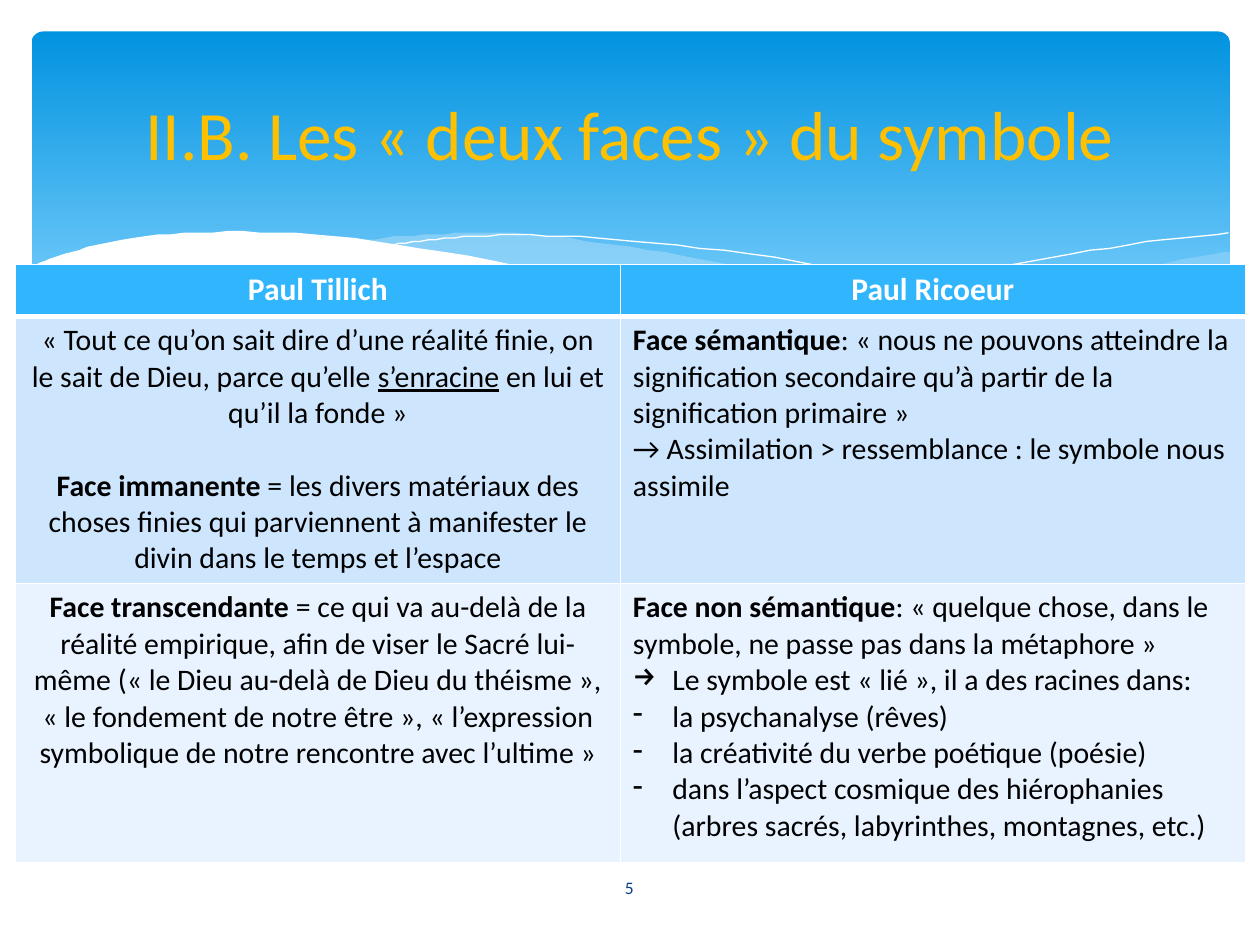
from dataclasses import dataclass

from lxml.etree import SubElement
from pptx import Presentation
from pptx.dml.color import RGBColor
from pptx.enum.shapes import MSO_SHAPE as Shp
from pptx.enum.text import MSO_ANCHOR as Anchor, PP_ALIGN as Align
from pptx.oxml import parse_xml
from pptx.oxml.ns import nsdecls, qn
from pptx.util import Pt


@dataclass(frozen=True)
class Theme:
    font: str = "Calibri"
    white: str = "FFFFFF"
    black: str = "000000"
    sky_top: str = "0293E0"
    sky_bottom: str = "83D3FE"
    haze: str = "C6E7FC"
    gold: str = "FFC000"
    navy: str = "073E87"
    header: str = "31B6FD"
    band_dark: str = "CEE5FE"
    band_light: str = "E8F3FF"
    title_size: float = 39.6
    header_size: float = 18
    body_size: float = 17
    number_size: float = 10


@dataclass(frozen=True)
class Run:
    text: str
    bold: bool = False
    underline: bool = False


@dataclass(frozen=True)
class Para:
    runs: tuple[Run, ...]
    align: Align = Align.LEFT
    bullet: str = ""
    after: float = 0


@dataclass(frozen=True)
class Wave:
    curves: tuple[list[tuple[float, float]], ...]
    fill: str = ""
    alpha: int = 100
    line: str = ""


T = Theme()
HANG = 22.5
BLANK_LINE = 20.75

WAVES = [
    Wave(([(475.9, 190.8), (508, 185), (542.2, 178.6), (579.6, 170.6), (619.9, 160.6),
           (652.3, 153.4), (682.6, 146.9), (702.7, 144)],
          [(702.7, 177.8), (683.3, 185), (663.1, 190.8), (640.1, 195.1), (614.9, 198.7),
           (586.1, 200.2), (553.7, 199.4), (517.7, 195.8), (475.9, 190.8)]),
         fill=T.haze, alpha=29),
    Wave(([(205.9, 137.5), (225.4, 135.4), (247.7, 133.9), (273.6, 133.2), (302.4, 133.9),
           (334.8, 137.5), (370.1, 142.6), (409.7, 149.8), (452.9, 159.8), (508.3, 172.8),
           (558, 182.9), (602.6, 190.8), (643, 196.6)],
          [(643, 196.6), (617, 199.4), (588.2, 200.2), (556.6, 199.4), (520, 196.6),
           (478.8, 191.5), (432.7, 183.6), (381.6, 172.8), (323.3, 159.8), (290.9, 151.9),
           (260.6, 146.2), (232.6, 141.1), (205.9, 137.5)]),
         fill=T.haze, alpha=40),
    Wave(([(222.5, 140.4), (236.2, 138.2), (254.2, 136.1), (278.6, 134.6), (311.8, 134.6),
           (352.1, 136.8), (400.3, 141.8), (457.9, 149.8), (523.4, 162.7), (598.3, 180.7),
           (653, 195.8)],), line=T.white),
    Wave(([(441.4, 185), (470.2, 177.1), (500.4, 169.2), (538.6, 160.6), (580.3, 151.2),
           (623.5, 143.3), (665.3, 136.8), (702, 133.2)],), line=T.white),
    Wave(([(16.6, 153.4), (25.9, 149), (37.4, 144.7), (54.7, 140.4), (76.3, 136.1),
           (105.1, 133.2), (139, 132.5), (180, 133.9), (227.5, 139.7), (281.5, 149),
           (342, 163.4), (399.6, 176.4), (451.4, 185.8), (495.4, 193), (535.7, 197.3),
           (571, 199.4), (602.6, 198.7), (630, 196.6), (655.2, 192.2), (676.8, 186.5),
           (703.4, 177.1)],
          [(703.4, 236.9), (16.6, 236.9)]), fill=T.white),
]

HEADER = [[Para((Run(name),), Align.CENTER)] for name in ("Paul Tillich", "Paul Ricoeur")]

IMMANENT = [
    Para((Run("« Tout ce qu’on sait dire d’une réalité finie, on le sait de Dieu, parce qu’elle "),
          Run("s’enracine", underline=True),
          Run(" en lui et qu’il la fonde »")), Align.CENTER, after=BLANK_LINE),
    Para((Run("Face immanente ", bold=True),
          Run("= les divers matériaux des choses finies qui parviennent à manifester "
              "le divin dans le temps et l’espace")), Align.CENTER),
]
SEMANTIC = [
    Para((Run("Face sémantique", bold=True),
          Run(": « nous ne pouvons atteindre la signification secondaire qu’à partir "
              "de la signification primaire »"))),
    Para((Run("→ Assimilation > ressemblance : le symbole nous assimile"),)),
]
TRANSCENDENT = [
    Para((Run("Face transcendante ", bold=True),
          Run("= ce qui va au-delà de la réalité empirique, afin de viser le Sacré lui-même "
              "(« le Dieu au-delà de Dieu du théisme », « le fondement de notre être », "
              "« l’expression symbolique de notre rencontre avec l’ultime »")), Align.CENTER),
]
NON_SEMANTIC = [
    Para((Run("Face non sémantique", bold=True),
          Run(": « quelque chose, dans le symbole, ne passe pas dans la métaphore »"))),
    Para((Run("Le symbole est « lié », il a des racines dans:"),), bullet="→"),
    *(Para((Run(root),), bullet="-") for root in (
        "la psychanalyse (rêves)",
        "la créativité du verbe poétique (poésie)",
        "dans l’aspect cosmique des hiérophanies (arbres sacrés, labyrinthes, montagnes, etc.)",
    )),
]


def rgb(color: str) -> RGBColor:
    return RGBColor.from_string(color)


def write(tf, paras: list[Para], *, size: float, color: str, bold: bool = False) -> None:
    tf.word_wrap = True
    for i, para in enumerate(paras):
        p = tf.add_paragraph() if i else tf.paragraphs[0]
        p.alignment = para.align
        if para.after:
            p.space_after = Pt(para.after)
        if para.bullet:
            ppr = p._p.get_or_add_pPr()
            ppr.set("marL", str(Pt(HANG)))
            ppr.set("indent", str(-Pt(HANG)))
            SubElement(ppr, qn("a:buChar")).set("char", para.bullet)
        for run in para.runs:
            r = p.add_run()
            r.text = run.text
            r.font.name, r.font.size = T.font, Pt(size)
            r.font.bold = bold or run.bold
            r.font.underline = run.underline
            r.font.color.rgb = rgb(color)


def add_text(s, text: str, box: tuple[float, ...], *, size: float, color: str) -> None:
    tf = s.shapes.add_textbox(*map(Pt, box)).text_frame
    tf.vertical_anchor = Anchor.MIDDLE
    write(tf, [Para((Run(text),), Align.CENTER)], size=size, color=color)


def add_sky(s) -> None:
    sp = s.shapes.add_shape(Shp.ROUNDED_RECTANGLE, Pt(18), Pt(18), Pt(684.7), Pt(194.4))
    sp.adjustments[0] = 0.034
    sp.shadow.inherit = False
    sp.line.fill.background()
    sp.fill.gradient()
    sp.fill.gradient_angle = 270
    for stop, color, place in zip(sp.fill.gradient_stops, (T.sky_top, T.sky_bottom), (0, 0.9)):
        stop.color.rgb, stop.position = rgb(color), place


def smooth(points: list[tuple[float, float]], steps: int = 4) -> list[tuple[float, float]]:
    if len(points) < 3:
        return points
    padded = [points[0], *points, points[-1]]
    curve = [points[0]]
    for a, b, c, d in zip(padded, padded[1:], padded[2:], padded[3:]):
        for t in (k / steps for k in range(1, steps + 1)):
            curve.append(tuple(
                (2 * q + (r - p) * t + (2 * p - 5 * q + 4 * r - u) * t ** 2
                 + (3 * q - p - 3 * r + u) * t ** 3) / 2
                for p, q, r, u in zip(a, b, c, d)))
    return curve


def add_wave(s, wave: Wave) -> None:
    points = [point for curve in wave.curves for point in smooth(curve)]
    builder = s.shapes.build_freeform(*points[0], scale=float(Pt(1)))
    builder.add_line_segments(points[1:], close=bool(wave.fill))
    sp = builder.convert_to_shape()
    sp.shadow.inherit = False
    if wave.fill:
        sp.fill.solid()
        sp.fill.fore_color.rgb = rgb(wave.fill)
        if wave.alpha < 100:
            clr = sp.fill._xPr.find(f"{qn('a:solidFill')}/{qn('a:srgbClr')}")
            SubElement(clr, qn("a:alpha")).set("val", str(wave.alpha * 1000))
    else:
        sp.fill.background()
    if wave.line:
        sp.line.color.rgb, sp.line.width = rgb(wave.line), Pt(0)
    else:
        sp.line.fill.background()


def set_borders(cell, top: float, bottom: float) -> None:
    tcpr = cell._tc.get_or_add_tcPr()
    for i, (side, width) in enumerate(zip("LRTB", (1, 1, top, bottom))):
        tcpr.insert(i, parse_xml(
            f'<a:ln{side} {nsdecls("a")} w="{Pt(width)}"><a:solidFill>'
            f'<a:srgbClr val="{T.white}"/></a:solidFill></a:ln{side}>'))


def add_faces_table(s) -> None:
    rows = [(HEADER, T.header, 29.5, 1, 3),
            ([IMMANENT, SEMANTIC], T.band_dark, 152, 3, 1),
            ([TRANSCENDENT, NON_SEMANTIC], T.band_light, 159.8, 1, 1)]
    widths = (345.6, 357.1)
    height = sum(row[2] for row in rows)
    table = s.shapes.add_table(len(rows), len(widths), Pt(8.9), Pt(151.2),
                               Pt(sum(widths)), Pt(height)).table
    table.horz_banding = False
    for col, width in zip(table.columns, widths):
        col.width = Pt(width)
    for i, (texts, fill, row_height, top, bottom) in enumerate(rows):
        table.rows[i].height = Pt(row_height)
        for cell, paras in zip(table.rows[i].cells, texts):
            set_borders(cell, top, bottom)
            cell.fill.solid()
            cell.fill.fore_color.rgb = rgb(fill)
            write(cell.text_frame, paras, bold=i == 0,
                  size=T.body_size if i else T.header_size, color=T.black if i else T.white)


def main() -> None:
    prs = Presentation()
    prs.slide_width, prs.slide_height = Pt(720), Pt(540)
    s = prs.slides.add_slide(prs.slide_layouts[6])
    add_sky(s)
    for wave in WAVES:
        add_wave(s, wave)
    add_faces_table(s)
    add_text(s, "5", (313.9, 492.5, 91.4, 28.8), size=T.number_size, color=T.navy)
    add_text(s, "II.B. Les « deux faces » du symbole", (36, 26.6, 648, 98.6),
             size=T.title_size, color=T.gold)
    prs.save("out.pptx")


if __name__ == "__main__":
    main()
